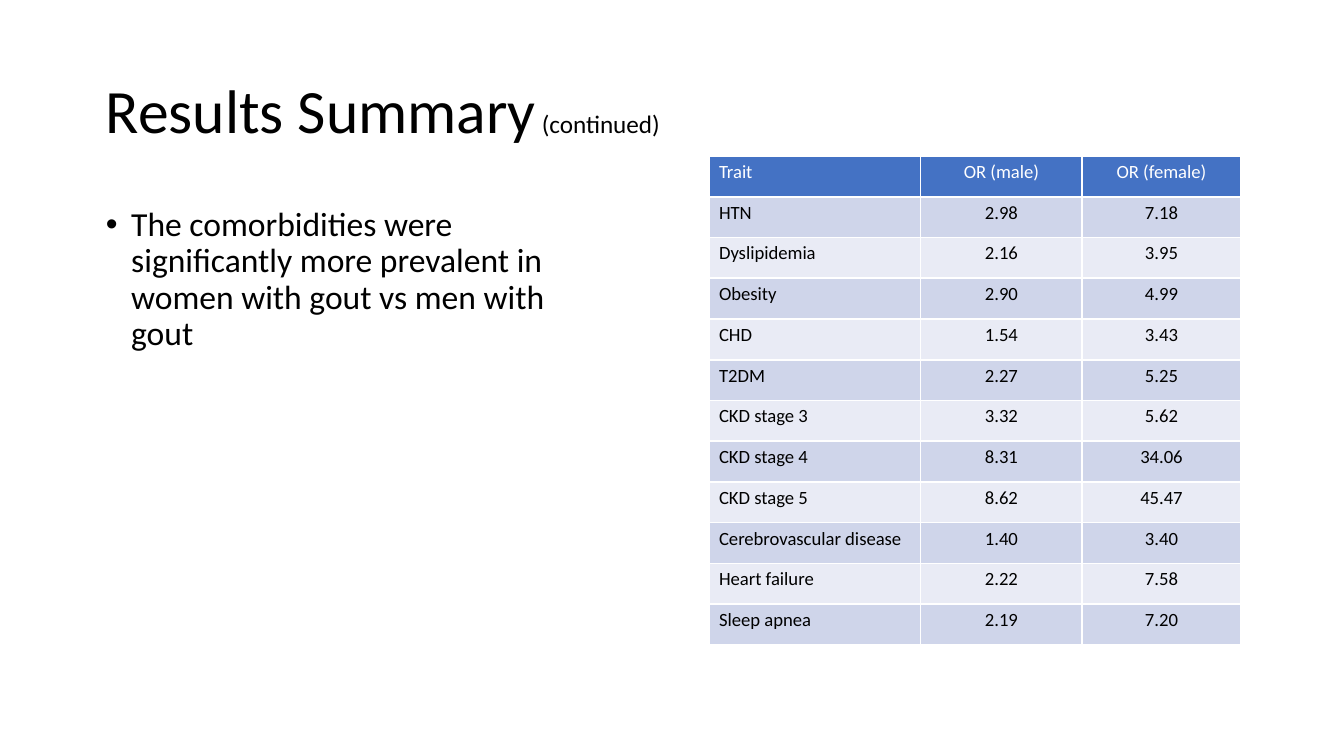
from lxml.etree import SubElement
from pptx import Presentation
from pptx.dml.color import RGBColor
from pptx.enum.text import MSO_ANCHOR as Anchor, PP_ALIGN as Align
from pptx.oxml.ns import qn
from pptx.util import Cm, Pt


def set_font(font, size, color):
    font.name = "Calibri"
    font.size = Pt(size)
    font.color.rgb = RGBColor.from_string(color)


prs = Presentation()
prs.slide_width, prs.slide_height = Cm(25.4), Cm(14.29)
slide = prs.slides.add_slide(prs.slide_layouts[6])

title = slide.shapes.add_textbox(Cm(1.75), Cm(0.76), Cm(21.9), Cm(2.77)).text_frame
title.word_wrap = True
title.vertical_anchor = Anchor.MIDDLE
heading = title.paragraphs[0]
heading.line_spacing = 0.9
for words, size in [("Results Summary", 33), (" (continued)", 13.5)]:
    run = heading.add_run()
    run.text = words
    set_font(run.font, size, "000000")

body = slide.shapes.add_textbox(Cm(1.75), Cm(3.8), Cm(8.84), Cm(9.07)).text_frame
body.word_wrap = True
finding = body.paragraphs[0]
finding.text = "The comorbidities were significantly more prevalent in women with gout vs men with gout"
finding.line_spacing = 0.9
props = finding._p.get_or_add_pPr()
props.set("marL", str(Cm(0.48)))
props.set("indent", str(-Cm(0.48)))
SubElement(props, qn("a:buFont"), typeface="Arial")
SubElement(props, qn("a:buChar"), char="•")
set_font(finding.font, 18, "000000")

odds_ratios = [
    ("Trait", "OR (male)", "OR (female)"),
    ("HTN", "2.98", "7.18"),
    ("Dyslipidemia", "2.16", "3.95"),
    ("Obesity", "2.90", "4.99"),
    ("CHD", "1.54", "3.43"),
    ("T2DM", "2.27", "5.25"),
    ("CKD stage 3", "3.32", "5.62"),
    ("CKD stage 4", "8.31", "34.06"),
    ("CKD stage 5", "8.62", "45.47"),
    ("Cerebrovascular disease", "1.40", "3.40"),
    ("Heart failure", "2.22", "7.58"),
    ("Sleep apnea", "2.19", "7.20"),
]
widths = [3.99, 3.05, 3.0]
row_height = 0.77
table = slide.shapes.add_table(
    len(odds_ratios), len(widths),
    Cm(13.41), Cm(2.95), Cm(sum(widths)), Cm(row_height * len(odds_ratios)),
).table
for column, width in zip(table.columns, widths):
    column.width = Cm(width)

for r, values in enumerate(odds_ratios):
    table.rows[r].height = Cm(row_height)
    if r == 0:
        fill, ink = "4472C4", "FFFFFF"
    else:
        fill, ink = ("CFD5EA" if r % 2 else "E9EBF5"), "000000"
    for c, value in enumerate(values):
        cell = table.cell(r, c)
        cell.text = value
        cell.margin_left = cell.margin_right = Cm(0.18)
        cell.margin_top = cell.margin_bottom = Cm(0.09)
        cell.fill.solid()
        cell.fill.fore_color.rgb = RGBColor.from_string(fill)
        entry = cell.text_frame.paragraphs[0]
        entry.alignment = Align.CENTER if c else Align.LEFT
        entry.font.bold = False
        set_font(entry.font, 10, ink)

prs.save("out.pptx")
